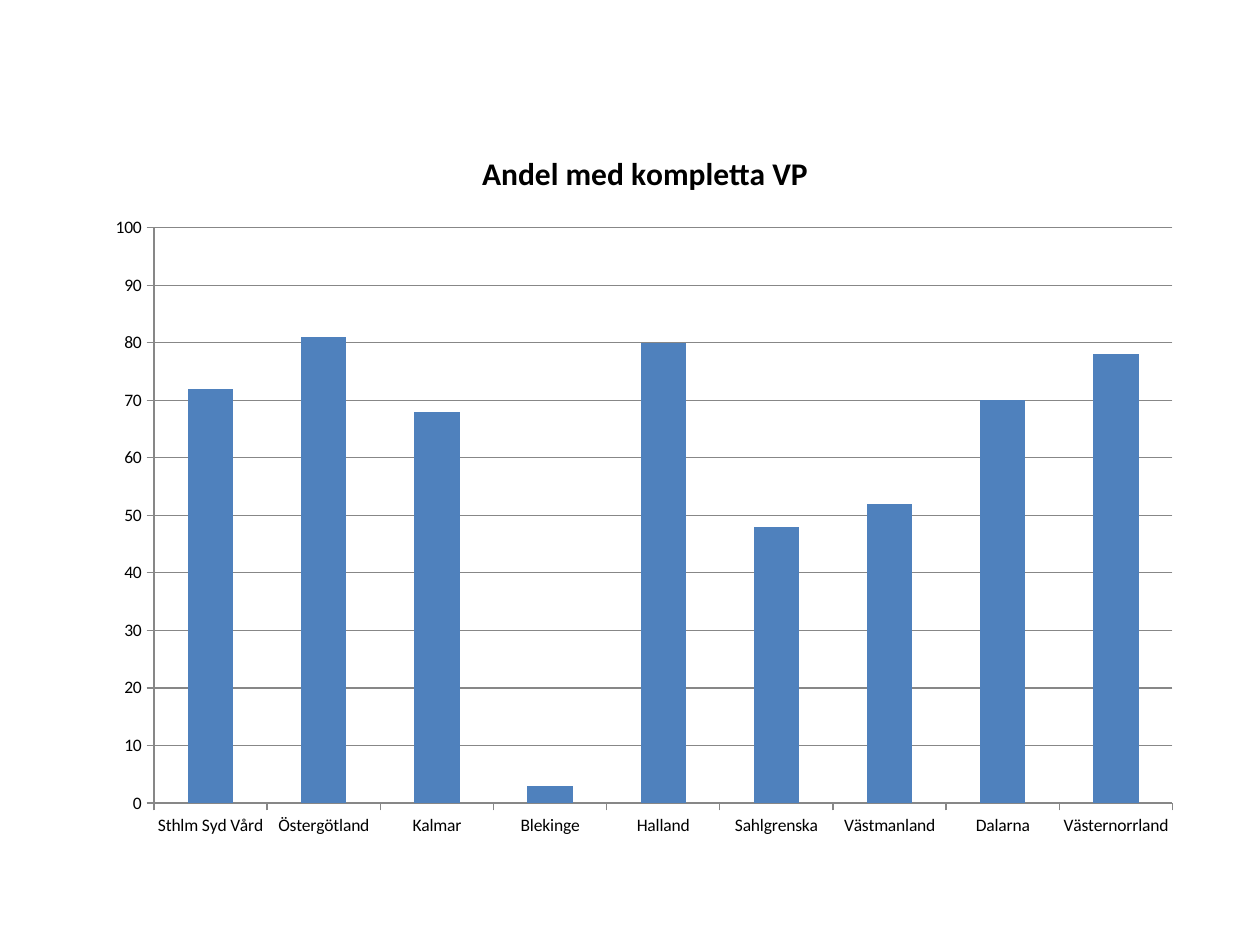
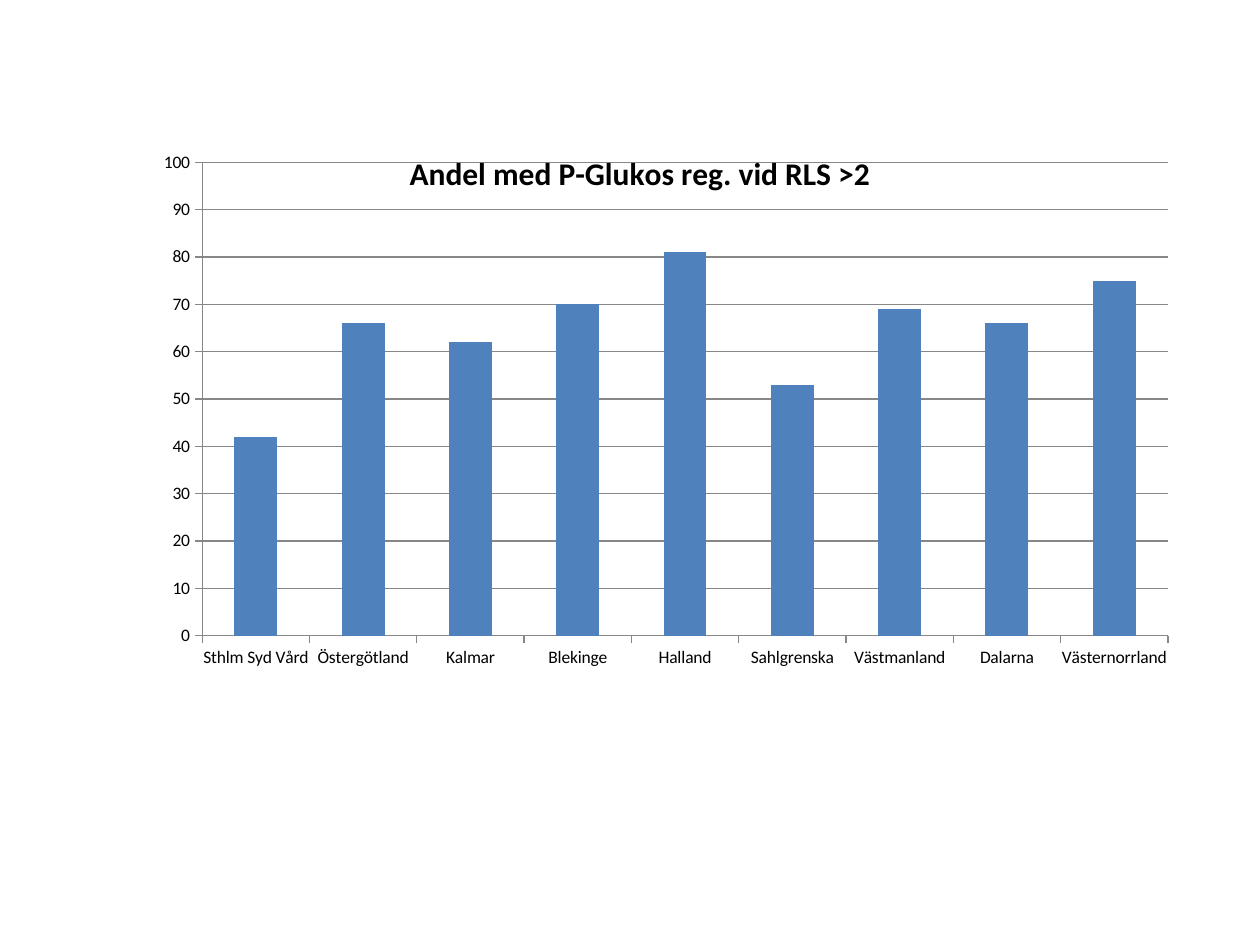
import pptx
import pptx.chart.data
import pptx.dml.color
import pptx.enum.chart
import pptx.oxml.ns
import pptx.util
from lxml import etree

COLOURS = {"bar": "4F81BD", "line": "878787", "text": "000000", "page": "FFFFFF"}
REGIONS = ["Sthlm Syd Vård", "Östergötland", "Kalmar", "Blekinge", "Halland",
           "Sahlgrenska", "Västmanland", "Dalarna", "Västernorrland"]


class ReportDeck:
    """Holds the shared style and the current page."""
    font = "Calibri"
    label_size = 10
    title_size = 18

    def __init__(self, width, height):
        self.deck = pptx.Presentation()
        self.deck.slide_width = pptx.util.Inches(width)
        self.deck.slide_height = pptx.util.Inches(height)
        self.page = None

    def colour(self, name):
        return pptx.dml.color.RGBColor.from_string(COLOURS[name])

    def add_page(self):
        self.page = self.deck.slides.add_slide(self.deck.slide_layouts[6])
        fill = self.page.background.fill
        fill.solid()
        fill.fore_color.rgb = self.colour("page")

    def style_font(self, font, size, bold=False):
        font.name = self.font
        font.size = pptx.util.Pt(size)
        font.bold = bold
        font.color.rgb = self.colour("text")

    def style_line(self, line):
        line.color.rgb = self.colour("line")
        line.width = pptx.util.Pt(0.75)

    def column_chart(self, title, values, frame, plot_area):
        """Place a chart; frame is in shares of the page, plot_area of the chart."""
        data = pptx.chart.data.CategoryChartData()
        data.categories = REGIONS
        data.add_series("Series 1", values)
        width, height = self.deck.slide_width, self.deck.slide_height
        left, top, wide, high = (
            round(share * side)
            for share, side in zip(frame, (width, height, width, height)))
        chart = self.page.shapes.add_chart(
            pptx.enum.chart.XL_CHART_TYPE.COLUMN_CLUSTERED,
            left, top, wide, high, data).chart
        chart.has_legend = False
        self.style_font(chart.font, self.label_size)
        self.chart_title(chart, title)
        self.chart_axes(chart)
        plot = chart.plots[0]
        plot.gap_width = 150
        plot.vary_by_categories = False
        fill = plot.series[0].format.fill
        fill.solid()
        fill.fore_color.rgb = self.colour("bar")
        self.fix_plot_area(chart, plot_area)

    def chart_title(self, chart, title):
        chart.has_title = True
        para = chart.chart_title.text_frame.paragraphs[0]
        span = para.add_run()
        span.text = title
        self.style_font(span.font, self.title_size, bold=True)
        overlay = chart.chart_title._element.find(pptx.oxml.ns.qn("c:overlay"))
        overlay.set("val", "1")

    def chart_axes(self, chart):
        for axis in (chart.category_axis, chart.value_axis):
            axis.major_tick_mark = pptx.enum.chart.XL_TICK_MARK.OUTSIDE
            axis.minor_tick_mark = pptx.enum.chart.XL_TICK_MARK.NONE
            self.style_line(axis.format.line)
        scale = chart.value_axis
        scale.minimum_scale, scale.maximum_scale, scale.major_unit = 0, 100, 10
        scale.has_major_gridlines = True
        self.style_line(scale.major_gridlines.format.line)

    def fix_plot_area(self, chart, shares):
        """Pin the inner plot area to left, top, width and height shares."""
        qn = pptx.oxml.ns.qn
        area = chart._chartSpace.find(qn("c:chart")).find(qn("c:plotArea"))
        for old in area.findall(qn("c:layout")):
            area.remove(old)
        layout = etree.Element(qn("c:layout"))
        area.insert(0, layout)
        manual = etree.SubElement(layout, qn("c:manualLayout"))
        settings = [("layoutTarget", "inner"), ("xMode", "edge"), ("yMode", "edge"),
                    *zip("xywh", shares)]
        for name, value in settings:
            etree.SubElement(manual, qn("c:" + name)).set("val", str(value))


def main():
    report = ReportDeck(10, 7.5)
    report.add_page()
    report.column_chart(
        "Andel med kompletta VP", [72, 81, 68, 3, 80, 48, 52, 70, 78],
        frame=(0.075, 0.132, 0.874, 0.767), plot_area=(0.054, 0.142, 0.925, 0.794))
    report.add_page()
    report.column_chart(
        "Andel med P-Glukos reg. vid RLS >2", [42, 66, 62, 70, 81, 53, 69, 66, 75],
        frame=(0.067, 0.132, 0.882, 0.777), plot_area=(0.106, 0.051, 0.869, 0.645))
    report.deck.save("out.pptx")


if __name__ == "__main__":
    main()
